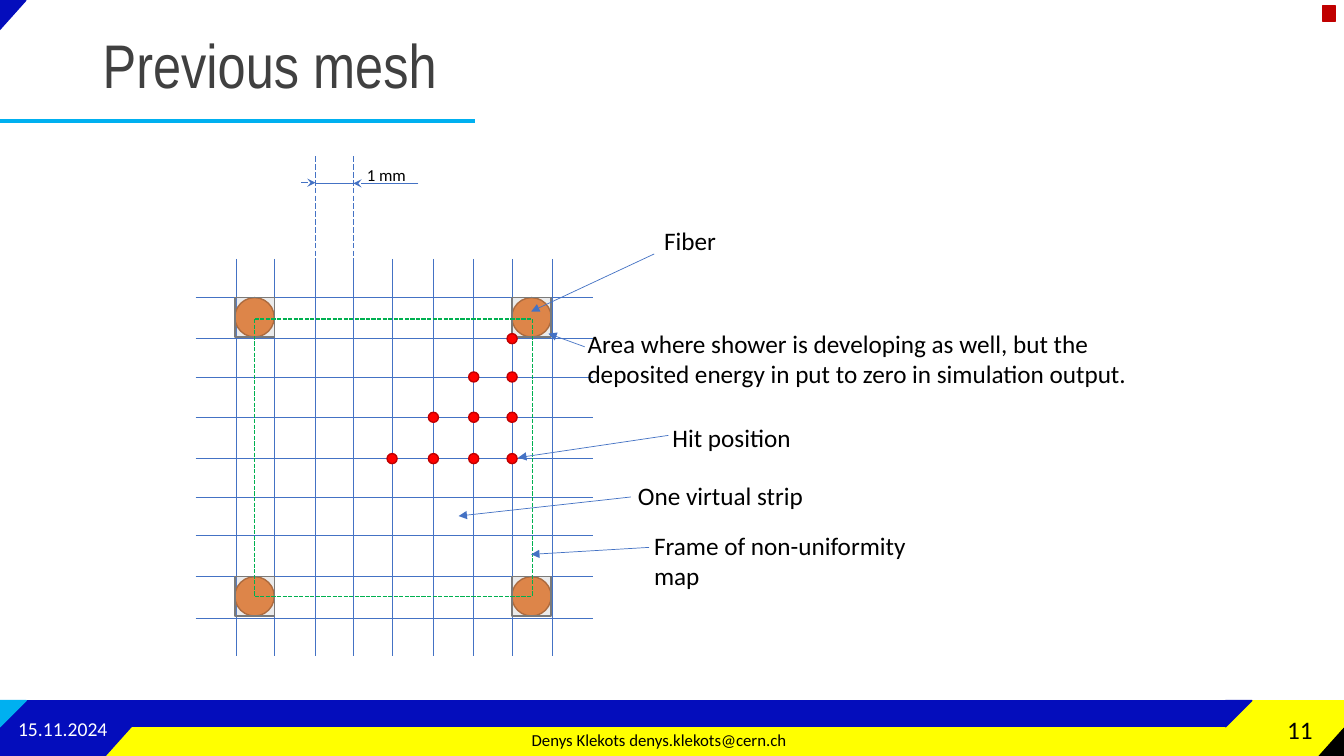
import pptx
import pptx.util
import pptx.dml.color
import pptx.enum.dml
import pptx.enum.shapes
import pptx.enum.text
import lxml.etree

Pt = pptx.util.Pt
RGB = pptx.dml.color.RGBColor.from_string
SHAPE = pptx.enum.shapes.MSO_SHAPE
DASH = pptx.enum.dml.MSO_LINE
ANCHOR = pptx.enum.text.MSO_ANCHOR
ALIGN = pptx.enum.text.PP_ALIGN
A = "{http://schemas.openxmlformats.org/drawingml/2006/main}"

C = {
    "yellow": "FFFF00", "navy": "040DBC", "sky": "00B0F0", "black": "000000",
    "crimson": "C00000", "red": "FF0000", "title": "404040", "white": "FFFFFF",
    "blue": "4472C4", "green": "00B050", "orange": "ED7D31", "brown": "AF5C24",
    "gray": "A5A5A5", "darkgray": "7A7A7A",
}

prs = pptx.Presentation()
prs.slide_width, prs.slide_height = Pt(960), Pt(540)
s = prs.slides.add_slide(prs.slide_layouts[5])


def add_shape(kind, x, y, w, h, fill, line, rotation=0):
    sp = s.shapes.add_shape(kind, Pt(x), Pt(y), Pt(w), Pt(h))
    sp.shadow.inherit = False
    sp.rotation = rotation
    sp.fill.solid()
    sp.fill.fore_color.rgb = RGB(C[fill])
    sp.line.color.rgb = RGB(C[line])
    sp.line.width = Pt(1)
    return sp


def add_line(x1, y1, x2, y2, color="blue", width=0.5, dash=None, arrow=None):
    cn = s.shapes.add_connector(pptx.enum.shapes.MSO_CONNECTOR.STRAIGHT,
                                Pt(x1), Pt(y1), Pt(x2), Pt(y2))
    cn.line.color.rgb = RGB(C[color])
    cn.line.width = Pt(width)
    if dash:
        cn.line.dash_style = dash
    if arrow:
        lxml.etree.SubElement(cn.line._get_or_add_ln(), A + "tailEnd", type=arrow)
    lxml.etree.SubElement(cn._element.spPr, A + "effectLst")


for x, y, w, h, color in [
    (0, 500.4, 960, 39.6, "yellow"),
    (0, 500.4, 875.5, 18.7, "navy"),
    (0, 519.1, 75.6, 20.9, "navy"),
    (944.6, 4.3, 9.4, 10.8, "crimson"),
]:
    add_shape(SHAPE.RECTANGLE, x, y, w, h, color, color)

for x, y, w, h, color, rotation in [
    (74.2, 519.8, 20.9, 18.7, "navy", 90),
    (875.5, 500.4, 18.7, 18.7, "navy", 90),
    (-1.4, 1.4, 20.9, 18.7, "navy", 90),
    (0, 500.4, 18.7, 18.7, "sky", 90),
    (940.3, 521.3, 20.9, 18.7, "black", 270),
]:
    add_shape(SHAPE.RIGHT_TRIANGLE, x, y, w, h, color, color, rotation)
add_line(0, 86.4, 339.1, 86.4, "sky", 3)

title = s.shapes.title
title.left, title.top, title.width, title.height = Pt(66.2), Pt(10.8), Pt(828), Pt(76.3)
tf = title.text_frame
tf.text = "Previous mesh"
tf.auto_size = pptx.enum.text.MSO_AUTO_SIZE.NONE
tf.vertical_anchor = ANCHOR.MIDDLE
p = tf.paragraphs[0]
p.alignment = ALIGN.LEFT
p.line_spacing = 0.9
p.font.name, p.font.size = "Arial Narrow", Pt(44)
p.font.color.rgb = RGB(C["title"])

rows = [212.4, 241.9, 269.3, 298.1, 327.6, 355, 382.3, 411.8, 441.4]
cols = [168.5, 195.8, 225.4, 252.7, 280.1, 309.6, 338.4, 365.8, 394.6]
for y in rows:
    add_line(139.7, y, 423.4, y)
for x in cols:
    add_line(x, 185, x, 468.7)

fiber = 28.1
for x in (167.8, 365.6):
    for y in (212.6, 411.9):
        add_shape(SHAPE.OVAL, x, y, fiber, fiber, "orange", "brown")
        sp = add_shape(SHAPE.RECTANGLE, x, y, fiber, fiber, "gray", "darkgray")
        rgb = sp._element.spPr.find(A + "solidFill")[0]
        lxml.etree.SubElement(rgb, A + "alpha", val="21000")

for x in cols[2:4]:
    add_line(x, 111.6, x, 185, dash=DASH.LONG_DASH)
add_line(252.7, 131, 225.4, 131)
add_line(298.8, 131, 252.4, 131, arrow="stealth")
add_line(215.3, 130.5, 225.4, 130.5, arrow="stealth")

dot = 7.2
for i, y in enumerate(rows[1:5]):
    for x in cols[7 - i:8]:
        add_shape(SHAPE.OVAL, x - dot / 2, y - dot / 2, dot, dot, "red", "crimson")

left, top, right, bottom = 182, 228, 380.2, 426.2
for x1, y1, x2, y2 in [
    (left, top, right, top),
    (right, top, right, bottom),
    (left, bottom, right, bottom),
    (left, top, left, bottom),
]:
    add_line(x1, y1, x2, y2, "green", 1, DASH.SQUARE_DOT)

for x1, y1, x2, y2 in [
    (467.3, 181.4, 379.4, 222.5),
    (417.6, 247.7, 391.7, 238.3),
    (477.4, 311, 370.1, 326.9),
    (450.7, 355, 327.6, 368.6),
    (463.7, 391, 379.4, 396),
]:
    add_line(x1, y1, x2, y2, arrow="triangle")

for text, x, y, w, h, size, color, align, anchor in [
    ("1 mm", 254.9, 113.8, 46, 21.6, 12, "black", ALIGN.LEFT, ANCHOR.TOP),
    ("Fiber", 467.3, 157.7, 56.9, 28.8, 18, "black", ALIGN.LEFT, ANCHOR.TOP),
    ("Area where shower is developing as well, but the deposited energy in put to zero in simulation output.",
     412.6, 231.1, 407.5, 51.1, 18, "black", ALIGN.LEFT, ANCHOR.TOP),
    ("Hit position", 473.2, 298.1, 104, 28.8, 18, "black", ALIGN.LEFT, ANCHOR.TOP),
    ("One virtual strip", 448.6, 339.8, 138.2, 28.8, 18, "black", ALIGN.LEFT, ANCHOR.TOP),
    ("Frame of non-uniformity map", 460.1, 375.1, 214.6, 51.1, 18, "black", ALIGN.LEFT, ANCHOR.TOP),
    ("15.11.2024", 5.8, 506.2, 84.2, 28.8, 14, "white", ALIGN.LEFT, ANCHOR.MIDDLE),
    ("Denys Klekots denys.klekots@cern.ch", 308.9, 514.1, 324, 28.8, 12, "black", ALIGN.CENTER, ANCHOR.MIDDLE),
    ("11", 884.9, 506.9, 59.8, 28.8, 18, "black", ALIGN.RIGHT, ANCHOR.MIDDLE),
]:
    tf = s.shapes.add_textbox(Pt(x), Pt(y), Pt(w), Pt(h)).text_frame
    tf.word_wrap = True
    tf.vertical_anchor = anchor
    tf.text = text
    p = tf.paragraphs[0]
    p.alignment = align
    p.font.name, p.font.size = "Calibri", Pt(size)
    p.font.color.rgb = RGB(C[color])

prs.save("out.pptx")
